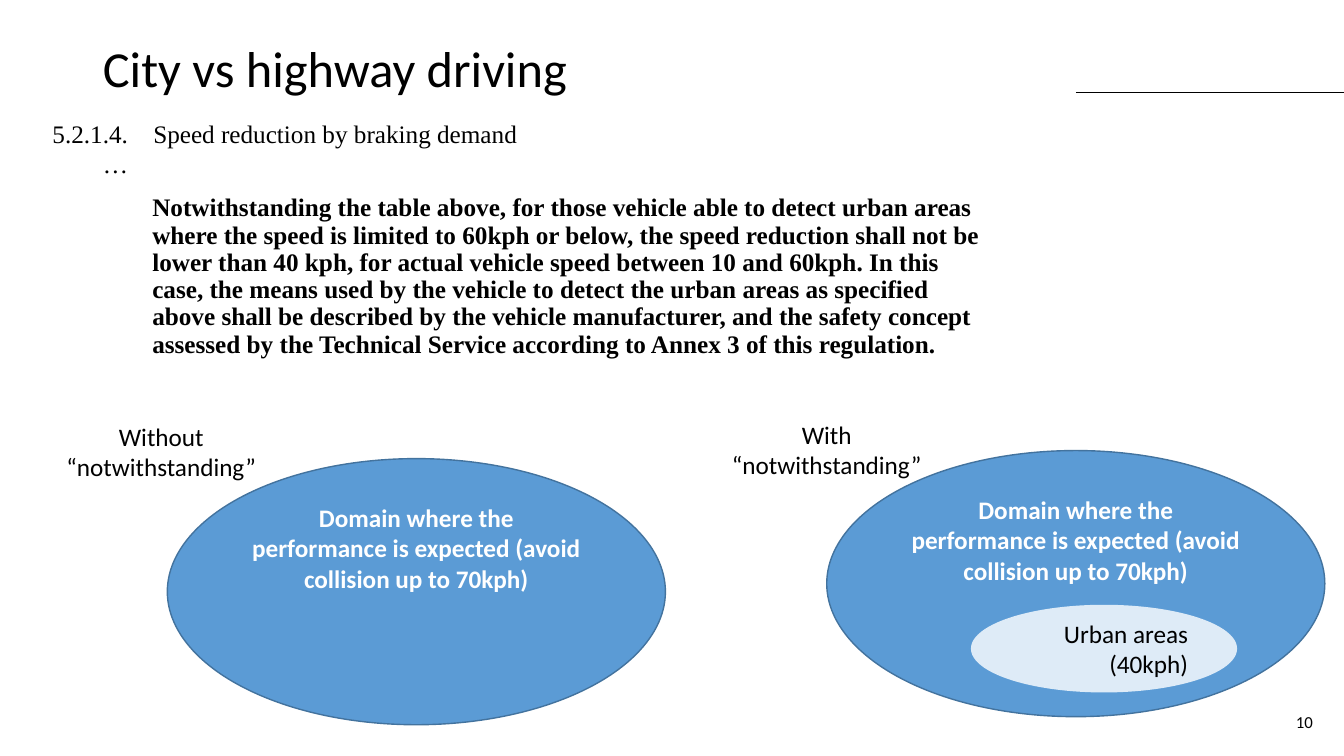
from lxml import etree
from pptx import Presentation
from pptx.dml.color import RGBColor
from pptx.enum.shapes import MSO_CONNECTOR, MSO_SHAPE
from pptx.enum.text import MSO_ANCHOR as ANCHOR, MSO_AUTO_SIZE, PP_ALIGN as ALIGN
from pptx.oxml.ns import qn
from pptx.util import Inches, Pt

# Content
TITLE = "City vs highway driving"
CLAUSE = ["5.2.1.4.\tSpeed reduction by braking demand", "\t…"]
EXCEPTION = (
    "Notwithstanding the table above, for those vehicle able to detect urban areas "
    "where the speed is limited to 60kph or below, the speed reduction shall not be "
    "lower than 40 kph, for actual vehicle speed between 10 and 60kph. In this case, "
    "the means used by the vehicle to detect the urban areas as specified above shall "
    "be described by the vehicle manufacturer, and the safety concept assessed by the "
    "Technical Service according to Annex 3 of this regulation."
)
DOMAIN = "Domain where the performance is expected (avoid collision up to 70kph)"
URBAN = "Urban areas (40kph)"
PAGE = "10"
# label, label position, ellipse position
CASES = [
    ("Without “notwithstanding”", (0.47, 4.13), (1.66, 4.55)),
    ("With “notwithstanding”", (7.07, 4.11), (8.2, 4.47)),
]
LABEL_SIZE = (2.26, 0.71)
DOMAIN_SIZE = (4.94, 2.64)
URBAN_BOX = (9.63, 6, 2.64, 0.87)
BLACK, WHITE = "000000", "FFFFFF"
BLUE, DARK_BLUE, PALE_BLUE = "5B9BD5", "43739E", "DEEBF7"


def color(value):
    return RGBColor.from_string(value)


def inches(box):
    return [Inches(v) for v in box]


def place(sp, box):
    sp.left, sp.top, sp.width, sp.height = inches(box)


def add_run(p, text, size=18, font="Calibri", hue=BLACK, bold=False):
    r = p.add_run()
    r.text = text
    r.font.size, r.font.name, r.font.bold = Pt(size), font, bold
    r.font.color.rgb = color(hue)


def write(sp, text, align, anchor=ANCHOR.TOP, **style):
    tf = sp.text_frame
    tf.word_wrap = True
    tf.auto_size = MSO_AUTO_SIZE.NONE
    tf.vertical_anchor = anchor
    p = tf.paragraphs[0]
    p.alignment = align
    add_run(p, text, **style)
    return p


def add_ellipse(shapes, box, fill, line=None):
    sp = shapes.add_shape(MSO_SHAPE.OVAL, *inches(box))
    sp.shadow.inherit = False
    sp.fill.solid()
    sp.fill.fore_color.rgb = color(fill)
    if line:
        sp.line.color.rgb = color(line)
        sp.line.width = Pt(1)
    else:
        sp.line.fill.background()
    return sp


def indent_plain(p, margin, tab=None):
    """Remove the bullet, set the left margin and an optional tab stop."""
    pPr = p._p.get_or_add_pPr()
    pPr.set("marL", str(Inches(margin)))
    pPr.set("indent", "0")
    etree.SubElement(pPr, qn("a:buNone"))
    if tab:
        stops = etree.SubElement(pPr, qn("a:tabLst"))
        etree.SubElement(stops, qn("a:tab"), pos=str(Inches(tab)), algn="l")


prs = Presentation()
prs.slide_width, prs.slide_height = inches((13.33, 7.5))
slide = prs.slides.add_slide(prs.slide_layouts[1])
shapes = slide.shapes

# Title
place(shapes.title, (0.92, 0.39, 11.5, 1.14))
p = write(shapes.title, TITLE, ALIGN.LEFT, size=36)
p.line_spacing = 0.9

# Regulation text
body = slide.placeholders[1]
place(body, (0.42, 1.12, 9.54, 2.85))
serif = "Times New Roman"
p = write(body, CLAUSE[0], ALIGN.LEFT, font=serif)
p.add_line_break()
add_run(p, CLAUSE[1], font=serif)
p.space_before = Pt(0)
indent_plain(p, 0, tab=1)
p = body.text_frame.add_paragraph()
add_run(p, EXCEPTION, font=serif, bold=True)
p.line_spacing, p.space_before = 0.9, Pt(12)
indent_plain(p, 0.99)

# Rule at the right of the title
rule = shapes.add_connector(MSO_CONNECTOR.STRAIGHT, *inches((10.67, 0.92, 13.33, 0.92)))
rule.line.color.rgb = color(BLACK)
rule.line.width = Pt(0.5)
etree.SubElement(rule._element.spPr, qn("a:effectLst"))

# Both cases: label and performance domain
for label, label_at, domain_at in CASES:
    write(shapes.add_textbox(*inches(label_at + LABEL_SIZE)), label, ALIGN.CENTER)
    domain = add_ellipse(shapes, domain_at + DOMAIN_SIZE, BLUE, DARK_BLUE)
    write(domain, DOMAIN, ALIGN.CENTER, hue=WHITE, bold=True)

# Urban part of the second domain
write(add_ellipse(shapes, URBAN_BOX, PALE_BLUE), URBAN, ALIGN.RIGHT, ANCHOR.MIDDLE)

# Page number
number = shapes.add_textbox(*inches((10.12, 6.96, 3, 0.4)))
write(number, PAGE, ALIGN.RIGHT, ANCHOR.MIDDLE, size=12)

prs.save("out.pptx")
